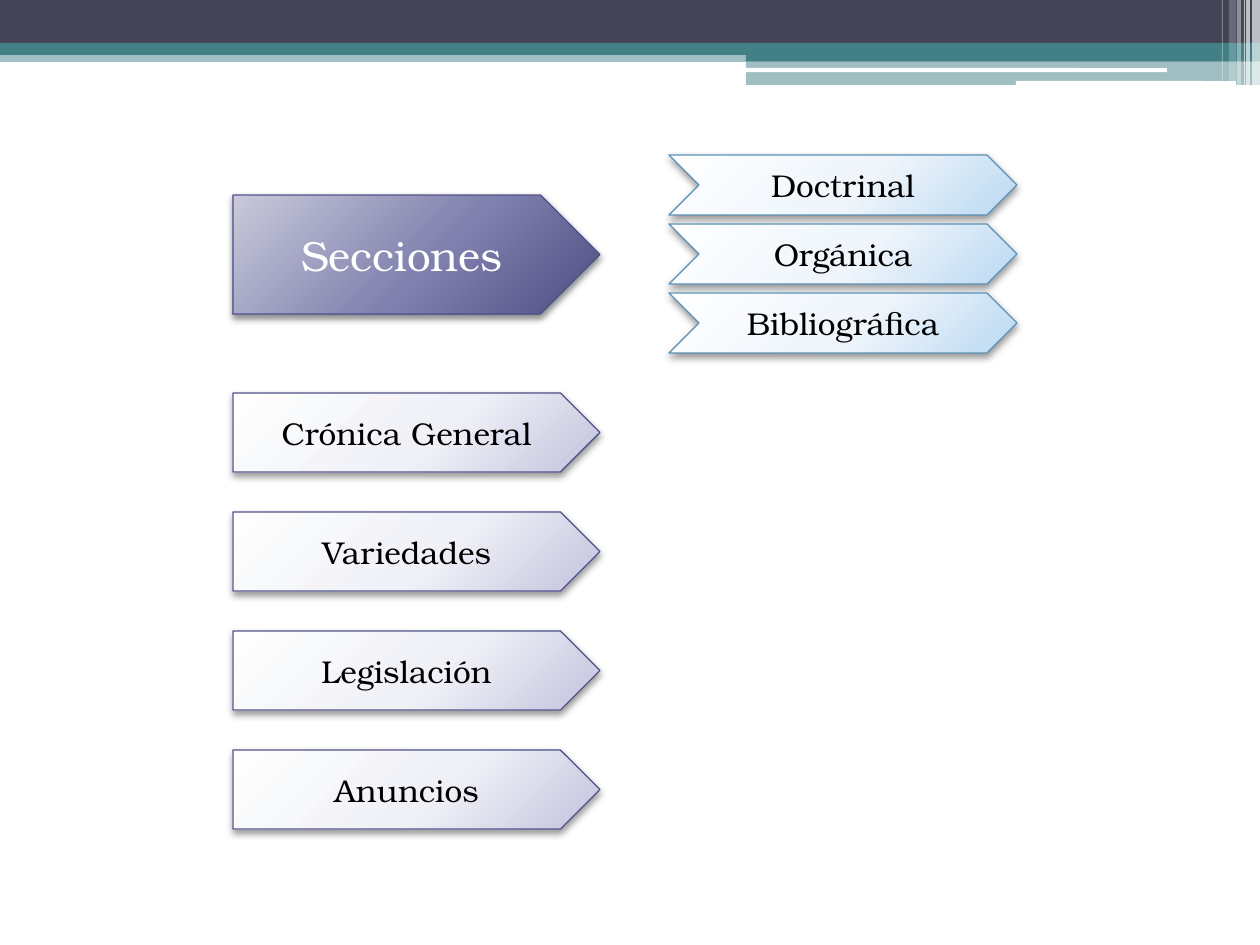
from dataclasses import dataclass

from lxml.etree import SubElement
from pptx import Presentation
from pptx.dml.color import RGBColor
from pptx.enum.shapes import MSO_SHAPE as Preset
from pptx.enum.text import MSO_ANCHOR as Anchor, PP_ALIGN as Align
from pptx.oxml.ns import qn
from pptx.util import Emu, Pt

EMU_PER_PX = 914400 / 126


@dataclass(frozen=True)
class Style:
    """Look of one kind of arrow."""
    stops: tuple
    outline: str
    text: str
    size: int
    shadow_opacity: int
    shadow_blur: float


@dataclass(frozen=True)
class Theme:
    """Colours, font and arrow styles of the slide."""
    font: str = "TeX Gyre Bonum"
    navy: str = "424456"
    teal: str = "438086"
    white: str = "FFFFFF"
    heading: Style = Style(("C9C9DA", "7F80AE", "4D4E81"), "53548A", "FFFFFF", 24, 45, 4)
    section: Style = Style(("FEFEFE", "F0F1F7", "C2C2DD"), "53548A", "000000", 18, 40, 4.1)
    detail: Style = Style(("FEFEFF", "EFF5FB", "BAD8F2"), "5C92B5", "000000", 18, 40, 4.1)


THEME = Theme()
BANDS = (
    (0, 50, 1260, 12, THEME.teal, 50),
    (0, 0, 1260, 43, THEME.navy, 100),
    (0, 43, 1260, 12, THEME.teal, 100),
    (746, 49, 514, 12, THEME.teal, 100),
    (746, 60, 514, 25, THEME.teal, 50),
)
RULES = ((745, 68, 422, 4), (1016, 81, 220, 5))
STRIPES = (
    (1252, 8, 85, 65), (1246, 4, 85, 65), (1244, 1, 85, 60),
    (1237, 4, 85, 40), (1229, 7, 81, 20), (1222, 1, 81, 30),
)
SECTIONS = ("Crónica General", "Variedades", "Legislación", "Anuncios")
DETAILS = ("Doctrinal", "Orgánica", "Bibliográfica")


def px(length):
    """Turn pixels into EMU."""
    return Emu(round(length * EMU_PER_PX))


def add_preset(page, preset, left, top, width, height):
    """Add a preset shape without the default shadow."""
    shape = page.shapes.add_shape(preset, px(left), px(top), px(width), px(height))
    shape.shadow.inherit = False
    return shape


def add_color(parent, color, opacity=100):
    """Add a colour element with its opacity in percent."""
    element = SubElement(parent, qn("a:srgbClr"), val=color)
    if opacity < 100:
        SubElement(element, qn("a:alpha"), val=str(opacity * 1000))


def add_band(page, left, top, width, height, color, opacity=100, preset=Preset.RECTANGLE):
    """Add a plain band of the header."""
    band = add_preset(page, preset, left, top, width, height)
    band.line.fill.background()
    band.fill.solid()
    band.fill.fore_color.rgb = RGBColor.from_string(color)
    if opacity < 100:
        color_element = band.element.spPr.find(".//" + qn("a:srgbClr"))
        SubElement(color_element, qn("a:alpha"), val=str(opacity * 1000))


def set_gradient(shape, colors):
    """Fill a shape with a circular gradient centred beyond its corner."""
    shape.fill.background()
    properties = shape.element.spPr
    blank = properties.find(qn("a:noFill"))
    gradient = SubElement(properties, qn("a:gradFill"), rotWithShape="1")
    stops = SubElement(gradient, qn("a:gsLst"))
    for position, color in zip((0, 55, 100), colors):
        add_color(SubElement(stops, qn("a:gs"), pos=str(position * 1000)), color)
    circle = SubElement(gradient, qn("a:path"), {"path": "circle"})
    SubElement(circle, qn("a:fillToRect"), l="-40000", t="-90000", r="140000", b="190000")
    properties.replace(blank, gradient)


def set_shadow(shape, opacity, blur):
    """Give a shape a soft shadow straight below it."""
    effects = shape.element.spPr.find(qn("a:effectLst"))
    shadow = SubElement(effects, qn("a:outerShdw"), blurRad=str(int(Pt(blur))),
                        dist=str(int(Pt(2))), dir="5400000", rotWithShape="0")
    add_color(shadow, "000000", opacity)


def add_arrow(page, preset, label, left, top, width, height, style):
    """Add a labelled arrow."""
    arrow = add_preset(page, preset, left, top, width, height)
    set_gradient(arrow, style.stops)
    arrow.line.color.rgb = RGBColor.from_string(style.outline)
    arrow.line.width = Pt(0.75)
    set_shadow(arrow, style.shadow_opacity, style.shadow_blur)
    frame = arrow.text_frame
    frame.vertical_anchor = Anchor.MIDDLE
    para = frame.paragraphs[0]
    para.text = label
    para.alignment = Align.CENTER
    para.font.name = THEME.font
    para.font.size = Pt(style.size)
    para.font.color.rgb = RGBColor.from_string(style.text)


def add_header(page):
    """Add the bands, rules and stripes along the top."""
    for band in BANDS:
        add_band(page, *band)
    for rule in RULES:
        add_band(page, *rule, THEME.white, preset=Preset.ROUNDED_RECTANGLE)
    for left, width, height, opacity in STRIPES:
        add_band(page, left, 0, width, height, THEME.white, opacity)


def main():
    """Build and save the slide."""
    deck = Presentation()
    deck.slide_width, deck.slide_height = px(1260), px(945)
    page = deck.slides.add_slide(deck.slide_layouts[6])
    add_header(page)
    add_arrow(page, Preset.PENTAGON, "Secciones", 233, 195, 367, 119, THEME.heading)
    for row, label in enumerate(SECTIONS):
        add_arrow(page, Preset.PENTAGON, label, 233, 393 + 119 * row, 367, 79, THEME.section)
    for row, label in enumerate(DETAILS):
        add_arrow(page, Preset.CHEVRON, label, 669, 155 + 69 * row, 348, 60, THEME.detail)
    deck.save("out.pptx")


if __name__ == "__main__":
    main()
